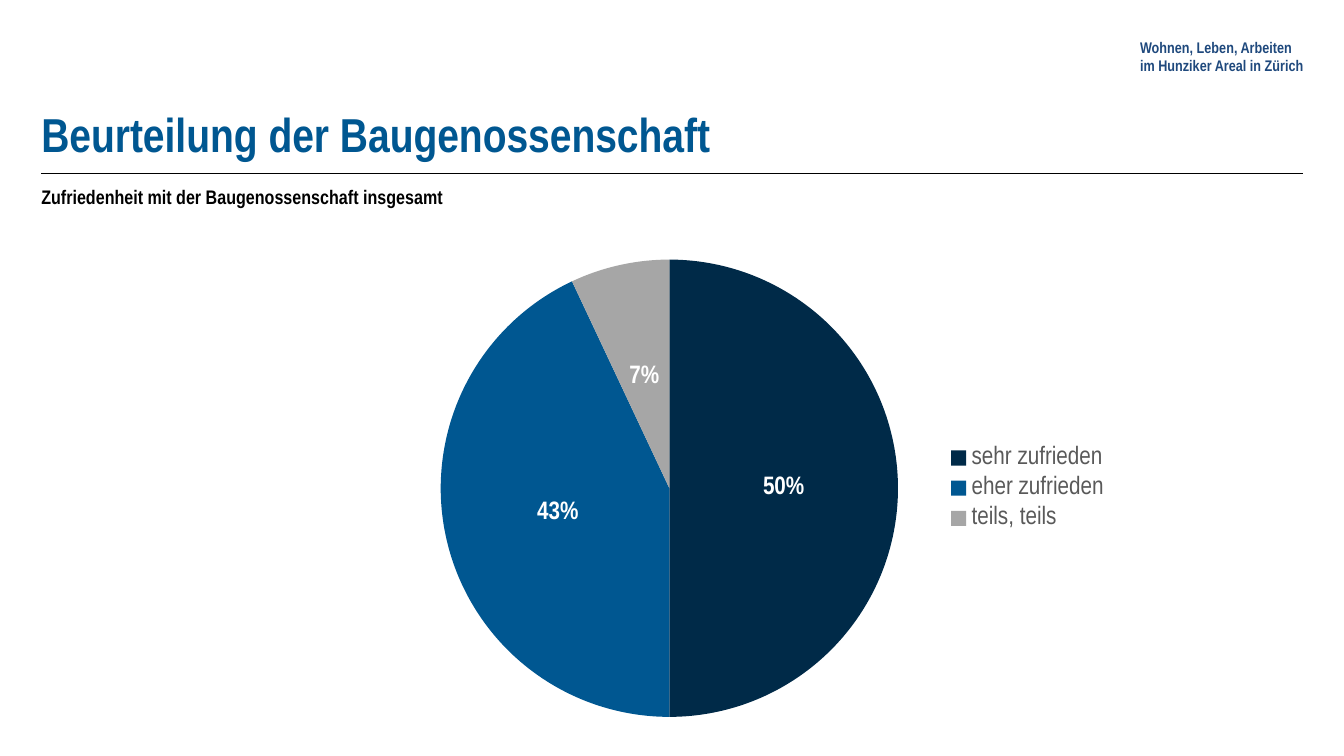
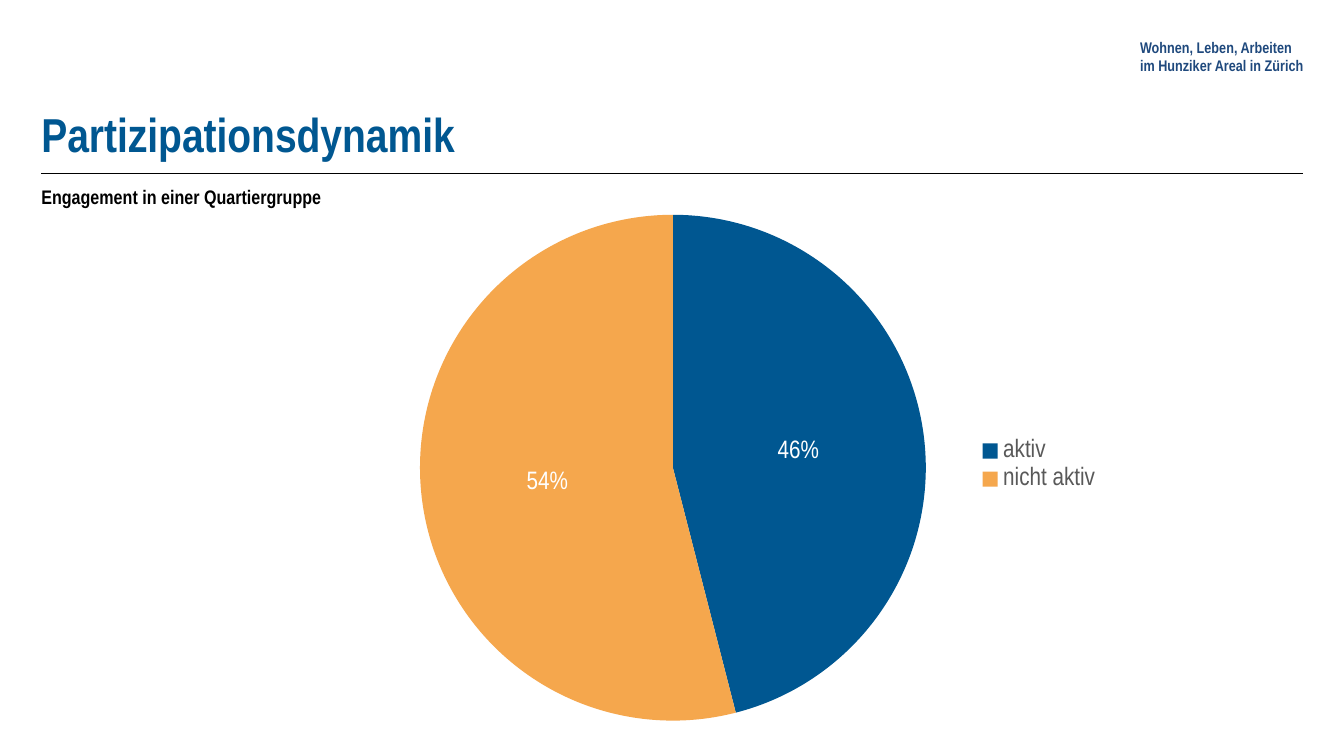
from lxml import etree
from pptx import Presentation
from pptx.chart.data import CategoryChartData
from pptx.dml.color import RGBColor
from pptx.enum import chart as charts, shapes, text
from pptx.oxml import ns
from pptx.util import Pt

FONT = "Arial Narrow"
NAVY, BLUE, GREY, ORANGE = "002A48", "005791", "A6A6A6", "F5A74D"
HEADER_BLUE, LEGEND_GREY, BLACK, WHITE = "1F497D", "595959", "000000", "FFFFFF"
LEFT, WIDTH = 29.5, 901.5
HEADER = "Wohnen, Leben, Arbeiten\vim Hunziker Areal in Zürich"

PAGES = [
    {
        "title": "Beurteilung der Baugenossenschaft",
        "subtitle": "Zufriedenheit mit der Baugenossenschaft insgesamt",
        "frame": (234.7, 174.2, 616.3, 349.2),
        "slices": [("sehr zufrieden", 0.5, NAVY), ("eher zufrieden", 0.43, BLUE), ("teils, teils", 0.07, GREY)],
        "bold_labels": True,
        "pie_area": (0.13, 0.03, 0.53, 0.94),
        "legend_area": (0.71, 0.4, 0.2, 0.2),
    },
    {
        "title": "Partizipationsdynamik",
        "subtitle": "Engagement in einer Quartiergruppe",
        "frame": (262.8, 141.8, 531.4, 380.9),
        "slices": [("aktiv", 0.46, BLUE), ("nicht aktiv", 0.54, ORANGE)],
        "bold_labels": False,
        "pie_area": (0.07, 0.03, 0.68, 0.95),
        "legend_area": None,
    },
]


def style_font(font, size, color, bold=False):
    font.name, font.size, font.bold = FONT, Pt(size), bold
    font.color.rgb = RGBColor.from_string(color)


def set_layout(parent, index, area, inner=False):
    for old in parent.findall(ns.qn("c:layout")):
        parent.remove(old)
    layout = etree.Element(ns.qn("c:layout"))
    manual = etree.SubElement(layout, ns.qn("c:manualLayout"))
    settings = [("layoutTarget", "inner")] if inner else []
    settings += [("xMode", "edge"), ("yMode", "edge"), *zip("xywh", area)]
    for name, value in settings:
        etree.SubElement(manual, ns.qn(f"c:{name}")).set("val", str(value))
    parent.insert(index, layout)


presentation = Presentation()
presentation.slide_width, presentation.slide_height = Pt(960), Pt(540)
title_only = presentation.slide_layouts[5]

for page in PAGES:
    slide = presentation.slides.add_slide(title_only)
    title = slide.shapes.title
    title.left, title.top, title.width, title.height = Pt(LEFT), Pt(26), Pt(WIDTH), Pt(90)
    header = slide.shapes.add_textbox(Pt(814.3), Pt(25.2), Pt(134), Pt(30.2))
    subtitle = slide.shapes.add_textbox(Pt(LEFT), Pt(131.8), Pt(WIDTH), Pt(25.2))

    for shape, words, size, color, anchor, inset in [
        (title, page["title"], 34, BLUE, text.MSO_ANCHOR.BOTTOM, 0),
        (header, HEADER, 11, HEADER_BLUE, text.MSO_ANCHOR.MIDDLE, 7.2),
        (subtitle, page["subtitle"], 14, BLACK, text.MSO_ANCHOR.TOP, 0),
    ]:
        frame = shape.text_frame
        frame.text = words
        frame.word_wrap = True
        frame.auto_size = text.MSO_AUTO_SIZE.NONE
        frame.vertical_anchor = anchor
        frame.margin_left = frame.margin_right = 0
        frame.margin_top = frame.margin_bottom = Pt(inset)
        paragraph = frame.paragraphs[0]
        paragraph.alignment = text.PP_ALIGN.LEFT
        style_font(paragraph.font, size, color, True)
    subtitle.text_frame.paragraphs[0].space_before = Pt(2.8)

    rule = slide.shapes.add_connector(
        shapes.MSO_CONNECTOR.STRAIGHT, Pt(LEFT), Pt(123.8), Pt(LEFT + WIDTH), Pt(123.8)
    )
    rule.line.color.rgb = RGBColor.from_string(BLACK)
    rule.line.width = Pt(1)
    etree.SubElement(rule.element.spPr, ns.qn("a:effectLst"))

    categories, values, colors = zip(*page["slices"])
    data = CategoryChartData(number_format="0%")
    data.categories = categories
    data.add_series("Anteil", values)
    chart = slide.shapes.add_chart(
        charts.XL_CHART_TYPE.PIE, *(Pt(length) for length in page["frame"]), data
    ).chart
    chart.has_title = False
    chart.has_legend = True
    chart.legend.position = charts.XL_LEGEND_POSITION.RIGHT
    chart.legend.include_in_layout = False
    style_font(chart.legend.font, 18, LEGEND_GREY)

    plot = chart.plots[0]
    plot.vary_by_categories = True
    for index, color in enumerate(colors):
        fill = plot.series[0].points[index].format.fill
        fill.solid()
        fill.fore_color.rgb = RGBColor.from_string(color)
    labels = plot.series[0].data_labels
    labels.show_value = True
    labels.number_format = "0%"
    labels.number_format_is_linked = False
    labels.position = charts.XL_LABEL_POSITION.CENTER
    style_font(labels.font, 18, WHITE, page["bold_labels"])

    set_layout(chart.element.find(".//" + ns.qn("c:plotArea")), 0, page["pie_area"], inner=True)
    if page["legend_area"]:
        set_layout(chart.element.find(".//" + ns.qn("c:legend")), 1, page["legend_area"])

presentation.save("out.pptx")
